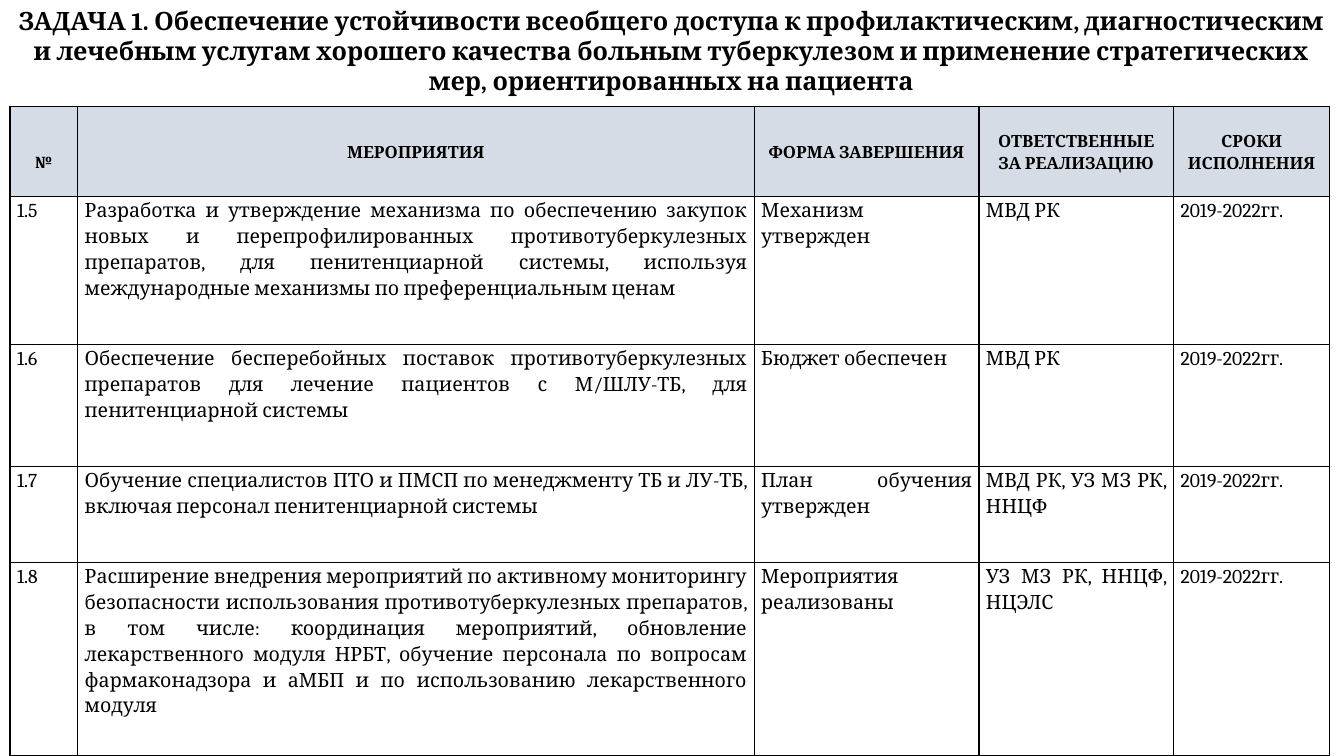
from dataclasses import dataclass

from lxml.etree import SubElement
from pptx import Presentation
from pptx.dml.color import RGBColor
from pptx.enum.text import MSO_ANCHOR as Anchor, PP_ALIGN as Align
from pptx.oxml.ns import qn
from pptx.slide import Slide
from pptx.table import _Cell as Cell
from pptx.util import Inches, Pt

BLACK = RGBColor(0x00, 0x00, 0x00)
HEADER_FILL = RGBColor(0xD6, 0xDC, 0xE5)
FONT = "Cambria"
TITLE = (
    "ЗАДАЧА 1. Обеспечение устойчивости всеобщего доступа к профилактическим, "
    "диагностическим и лечебным услугам хорошего качества больным туберкулезом "
    "и применение стратегических мер, ориентированных на пациента"
)
PERIOD = "2019-2022гг."


@dataclass(frozen=True)
class Column:
    heading: str
    width: float
    top_inset: float = 0


@dataclass(frozen=True)
class Measure:
    number: str
    activity: str
    outcome: str
    responsible: str
    height: float

    def texts(self) -> list[str]:
        return [self.number, self.activity, self.outcome, self.responsible, PERIOD]


COLUMNS = [
    Column("№", 0.67, 0.2),
    Column("МЕРОПРИЯТИЯ", 6.71),
    Column("ФОРМА ЗАВЕРШЕНИЯ", 2.23),
    Column("ОТВЕТСТВЕННЫЕ ЗА РЕАЛИЗАЦИЮ", 1.93),
    Column("СРОКИ ИСПОЛНЕНИЯ", 1.55),
]
HEADER_HEIGHT = 0.89
MEASURES = [
    Measure(
        "1.5",
        "Разработка и утверждение механизма по обеспечению закупок новых и "
        "перепрофилированных противотуберкулезных препаратов, для пенитенциарной "
        "системы, используя международные механизмы по преференциальным ценам",
        "Механизм утвержден", "МВД РК", 1.47,
    ),
    Measure(
        "1.6",
        "Обеспечение бесперебойных поставок противотуберкулезных препаратов для "
        "лечение пациентов с М/ШЛУ-ТБ, для пенитенциарной системы",
        "Бюджет обеспечен", "МВД РК", 1.21,
    ),
    Measure(
        "1.7",
        "Обучение специалистов ПТО и ПМСП по менеджменту ТБ и ЛУ-ТБ, "
        "включая персонал пенитенциарной системы",
        "План обучения утвержден", "МВД РК, УЗ МЗ РК, ННЦФ", 0.95,
    ),
    Measure(
        "1.8",
        "Расширение внедрения мероприятий по активному мониторингу безопасности "
        "использования противотуберкулезных препаратов, в том числе: координация "
        "мероприятий, обновление лекарственного модуля НРБТ, обучение персонала по "
        "вопросам фармаконадзора и аМБП и по использованию лекарственного модуля",
        "Мероприятия реализованы", "УЗ МЗ РК, ННЦФ, НЦЭЛС", 1.92,
    ),
]


def apply_format(target: object, values: dict[str, object]) -> None:
    for name, value in values.items():
        setattr(target, name, value)


def write_text(para: object, text: str, size: int, bold: bool, layout: dict[str, object]) -> None:
    apply_format(para, layout)
    span = para.add_run()
    span.text = text
    apply_format(span.font, {"name": FONT, "size": Pt(size), "bold": bold})
    span.font.color.rgb = BLACK


def add_borders(cell: Cell) -> None:
    properties = cell._tc.get_or_add_tcPr()
    for position, side in enumerate(("a:lnL", "a:lnR", "a:lnT", "a:lnB")):
        line = SubElement(properties, qn(side), w=str(Pt(1)))
        fill = SubElement(line, qn("a:solidFill"))
        SubElement(fill, qn("a:srgbClr"), val=str(BLACK))
        properties.remove(line)
        properties.insert(position, line)


def fill_cell(cell: Cell, text: str, header: bool, top_inset: float = 0) -> None:
    apply_format(cell, {
        "margin_left": Inches(0.07),
        "margin_right": Inches(0.07),
        "margin_top": Inches(top_inset),
        "margin_bottom": 0,
        "vertical_anchor": Anchor.MIDDLE if header else Anchor.TOP,
    })
    if header:
        cell.fill.solid()
        cell.fill.fore_color.rgb = HEADER_FILL
    else:
        cell.fill.background()
    layout = {
        "alignment": Align.CENTER if header else Align.JUSTIFY,
        "line_spacing": 1.15,
        "space_after": Pt(0 if header else 10),
    }
    write_text(cell.text_frame.paragraphs[0], text, 12 if header else 14, header, layout)
    add_borders(cell)


def add_title(page: Slide) -> None:
    box = page.shapes.add_textbox(Inches(0.08), 0, Inches(13.16), Inches(1.28))
    box.text_frame.word_wrap = True
    write_text(box.text_frame.paragraphs[0], TITLE, 18, True, {"alignment": Align.CENTER})


def add_plan(page: Slide) -> None:
    heights = [HEADER_HEIGHT] + [measure.height for measure in MEASURES]
    width = sum(column.width for column in COLUMNS)
    table = page.shapes.add_table(
        len(heights), len(COLUMNS),
        Inches(0.1), Inches(1.06), Inches(width), Inches(sum(heights)),
    ).table
    apply_format(table, {"first_row": False, "horz_banding": False})
    for row, height in zip(table.rows, heights):
        row.height = Inches(height)
    for index, column in enumerate(COLUMNS):
        table.columns[index].width = Inches(column.width)
        fill_cell(table.cell(0, index), column.heading, True, column.top_inset)
    for row_index, measure in enumerate(MEASURES, start=1):
        for index, text in enumerate(measure.texts()):
            fill_cell(table.cell(row_index, index), text, False)


def main() -> None:
    deck = Presentation()
    apply_format(deck, {"slide_width": Inches(13.33), "slide_height": Inches(7.5)})
    page = deck.slides.add_slide(deck.slide_layouts[6])
    add_title(page)
    add_plan(page)
    deck.save("out.pptx")


if __name__ == "__main__":
    main()
